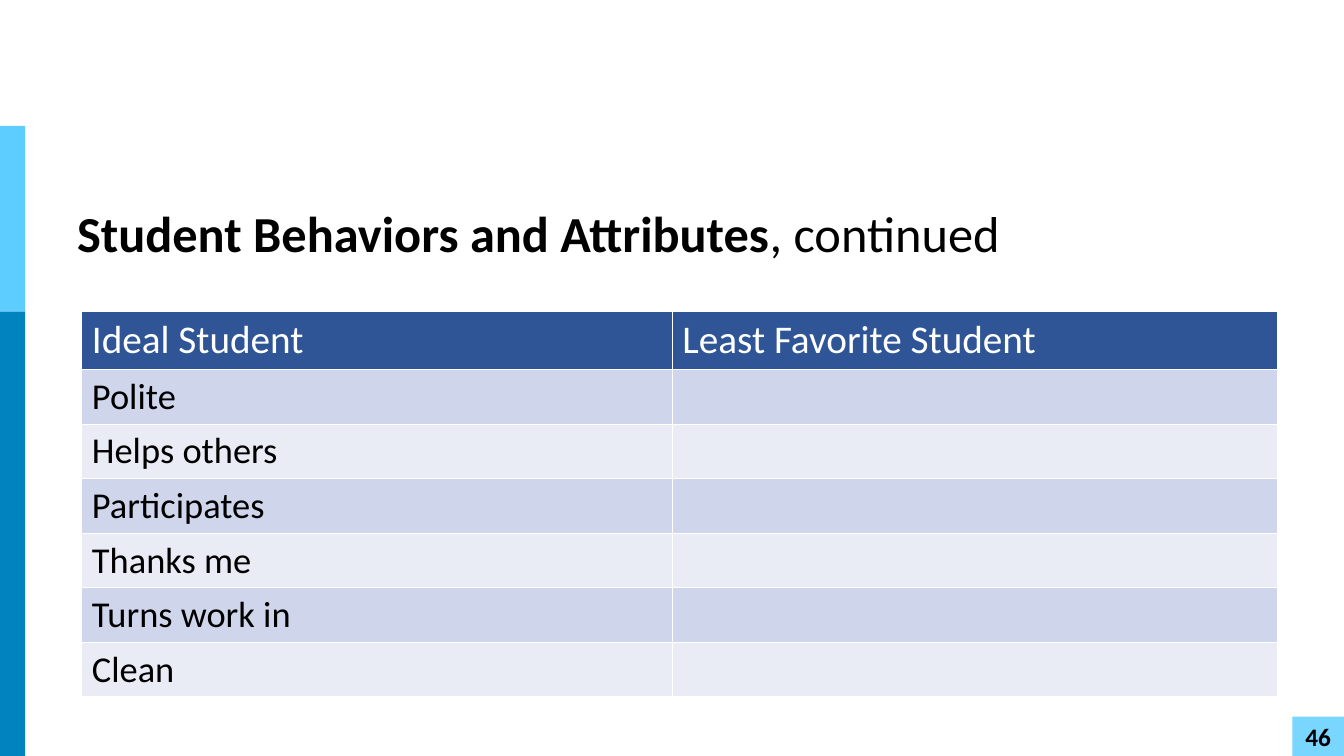
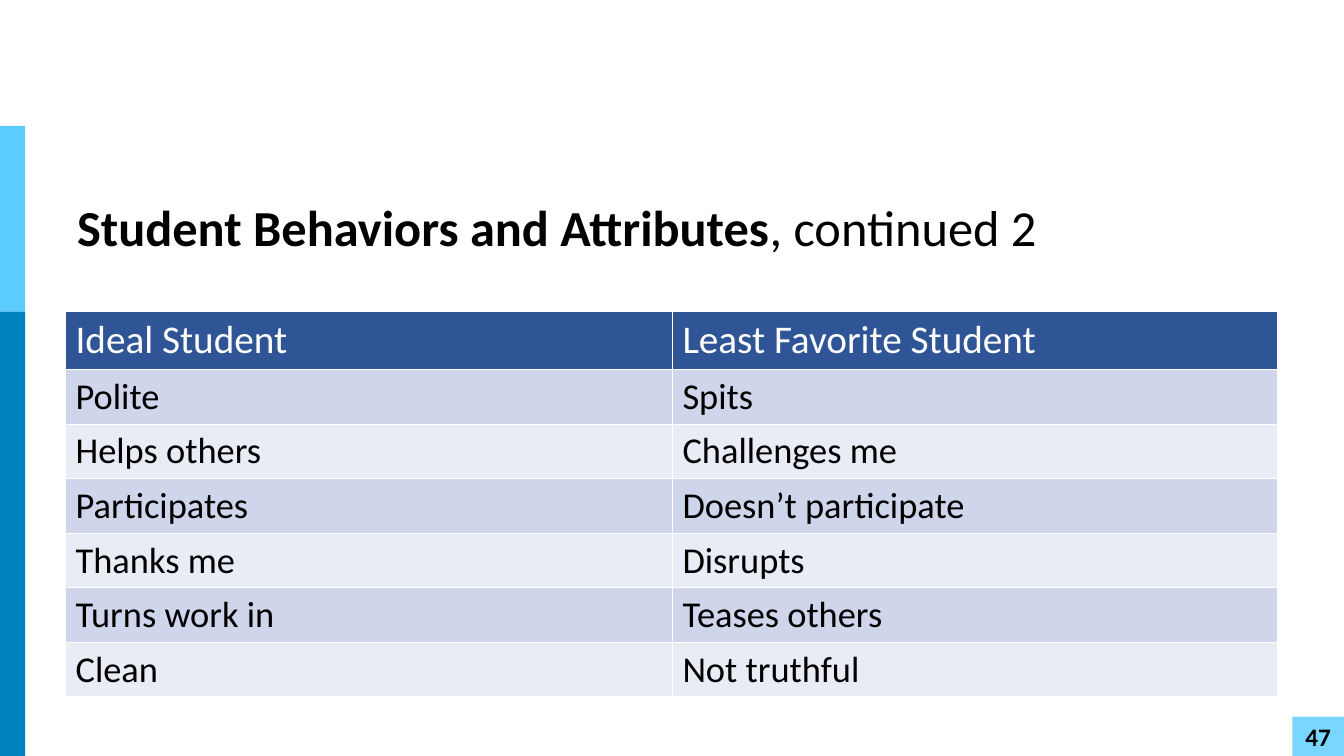
from dataclasses import dataclass

from pptx import Presentation
from pptx.dml.color import RGBColor
from pptx.enum.shapes import MSO_SHAPE
from pptx.enum.text import MSO_ANCHOR, PP_ALIGN
from pptx.util import Inches, Pt

RECTANGLE = MSO_SHAPE.RECTANGLE
MIDDLE = MSO_ANCHOR.MIDDLE
CENTER = PP_ALIGN.CENTER


@dataclass(frozen=True)
class Theme:
    font: str = "Calibri"
    title_size: int = 36
    header_size: int = 28
    body_size: int = 26
    number_size: int = 18
    dark: str = "000000"
    light: str = "FFFFFF"
    band_top: str = "5DCDFF"
    band_bottom: str = "0083BF"
    number_fill: str = "79D6FF"
    header_fill: str = "2F5597"
    row_fills: tuple = ("CFD5EA", "E9EBF5")


THEME = Theme()
COLUMNS, ROWS = 160, 90

BAND_WIDTH, BAND_TOP, BAND_SPLIT = 3, 15, 37.1
NUMBER_LEFT, NUMBER_TOP = 153.85, 85.3
TITLE_LEFT, TITLE_WIDTH = 8, 144.1
TABLE_MIDDLE, TABLE_RIGHT = 80.05, 152.05
HEADER_HEIGHT, ROW_HEIGHT = 6.9, 6.5

TITLE = "Student Behaviors and Attributes"
HEADERS = ("Ideal Student", "Least Favorite Student")
IDEAL = ("Polite", "Helps others", "Participates", "Thanks me", "Turns work in", "Clean")
LEAST_FAVORITE = ("Spits", "Challenges me", "Doesn’t participate", "Disrupts",
                  "Teases others", "Not truthful")

# page number, title ending, title top, title height, table left, right column
PAGES = (
    (46, ", continued", 20.65, 14.9, 9.75, ("",) * len(IDEAL)),
    (47, ", continued 2", 21.85, 11.05, 7.8, LEAST_FAVORITE),
)

deck = Presentation()
deck.slide_width, deck.slide_height = Inches(13.33), Inches(7.5)
blank = deck.slide_layouts[6]


def grid(left, top, width, height):
    """Turn grid columns and rows into slide lengths."""
    column, row = deck.slide_width / COLUMNS, deck.slide_height / ROWS
    return [round(size) for size in (left * column, top * row, width * column, height * row)]


def style(para, size, color, bold=False):
    for span in para.runs:
        span.font.name = THEME.font
        span.font.size = Pt(size)
        span.font.bold = bold
        span.font.color.rgb = RGBColor.from_string(color)


for number, ending, title_top, title_height, table_left, right_column in PAGES:
    page = deck.slides.add_slide(blank)

    # Side bands and page number
    for area, color, label in (
        ((0, BAND_TOP, BAND_WIDTH, BAND_SPLIT - BAND_TOP), THEME.band_top, ""),
        ((0, BAND_SPLIT, BAND_WIDTH, ROWS - BAND_SPLIT), THEME.band_bottom, ""),
        ((NUMBER_LEFT, NUMBER_TOP, COLUMNS - NUMBER_LEFT, ROWS - NUMBER_TOP),
         THEME.number_fill, str(number)),
    ):
        block = page.shapes.add_shape(RECTANGLE, *grid(*area))
        block.shadow.inherit = False
        block.fill.solid()
        block.fill.fore_color.rgb = RGBColor.from_string(color)
        block.line.fill.background()
        if label:
            block.text_frame.text = label
            para = block.text_frame.paragraphs[0]
            para.alignment = CENTER
            style(para, THEME.number_size, THEME.dark, bold=True)

    # Title
    box = page.shapes.add_textbox(*grid(TITLE_LEFT, title_top, TITLE_WIDTH, title_height))
    box.text_frame.word_wrap = True
    box.text_frame.vertical_anchor = MIDDLE
    para = box.text_frame.paragraphs[0]
    para.line_spacing = 0.9
    for text in (TITLE, ending):
        para.add_run().text = text
    style(para, THEME.title_size, THEME.dark)
    para.runs[0].font.bold = True

    # Table
    rows = [HEADERS, *zip(IDEAL, right_column)]
    heights = [HEADER_HEIGHT] + [ROW_HEIGHT] * len(IDEAL)
    area = grid(table_left, BAND_SPLIT, TABLE_RIGHT - table_left, sum(heights))
    table = page.shapes.add_table(len(rows), len(HEADERS), *area).table
    widths = (TABLE_MIDDLE - table_left, TABLE_RIGHT - TABLE_MIDDLE)
    for column, width in zip(table.columns, widths):
        column.width = grid(0, 0, width, 0)[2]
    for index, (texts, height) in enumerate(zip(rows, heights)):
        table.rows[index].height = grid(0, 0, 0, height)[3]
        if index == 0:
            fill, size, color = THEME.header_fill, THEME.header_size, THEME.light
        else:
            fill, size, color = THEME.row_fills[(index - 1) % 2], THEME.body_size, THEME.dark
        for cell, text in zip(table.rows[index].cells, texts):
            cell.fill.solid()
            cell.fill.fore_color.rgb = RGBColor.from_string(fill)
            if text:
                cell.text_frame.text = text
                style(cell.text_frame.paragraphs[0], size, color)

deck.save("out.pptx")
